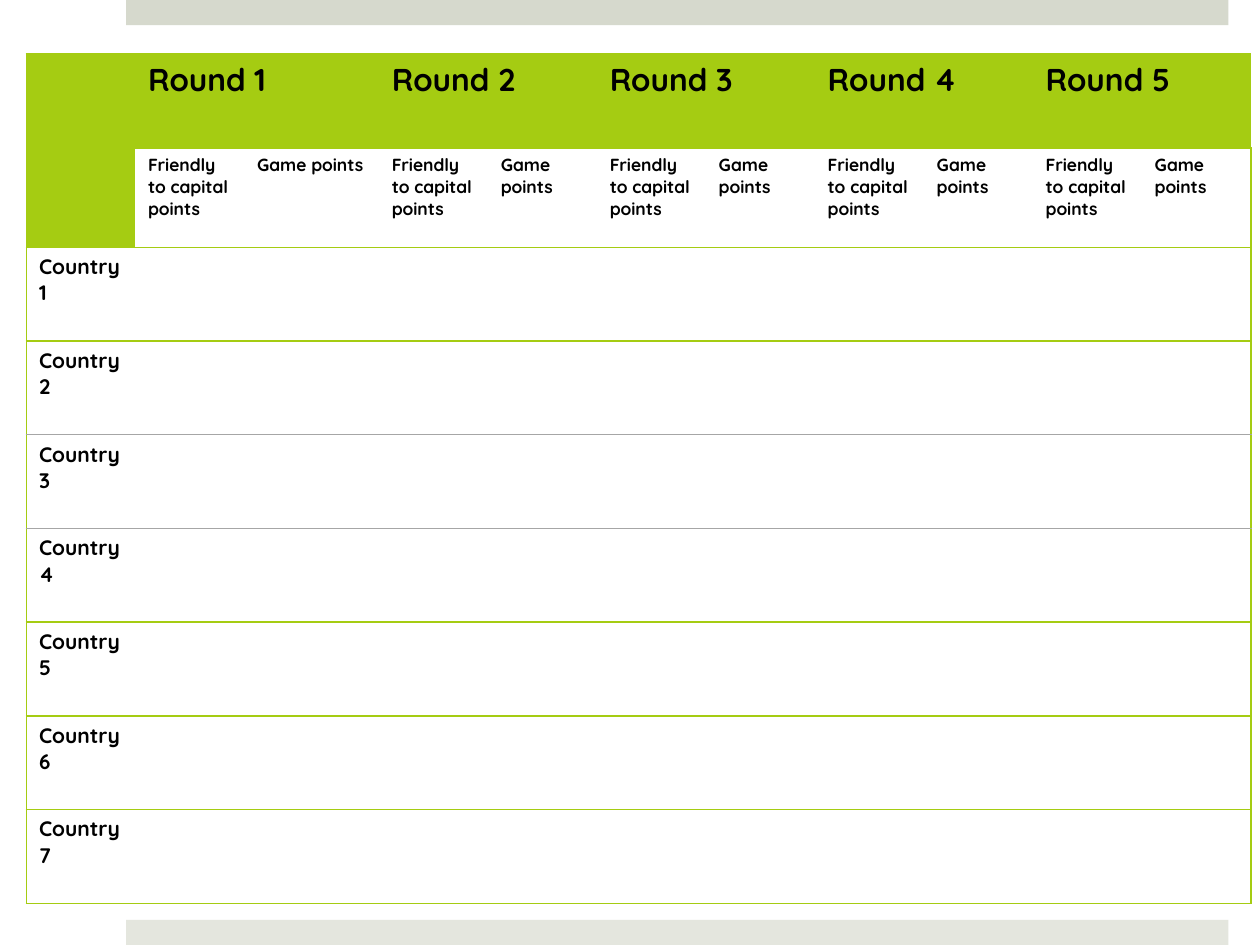
from dataclasses import dataclass

from lxml.etree import SubElement
from pptx import Presentation
from pptx.dml.color import RGBColor
from pptx.enum.shapes import MSO_SHAPE
from pptx.oxml.ns import qn
from pptx.util import Inches, Pt


@dataclass(frozen=True)
class Theme:
    font: str = "Quicksand"
    text: str = "000000"
    green: str = "A5CC12"
    grey: str = "A6A6A6"
    top_bar: str = "D6D9CD"
    bottom_bar: str = "E4E6DE"
    round_size: int = 18
    points_size: int = 10
    country_size: int = 12
    line: float = 1
    thin_line: float = 0.5


THEME = Theme()
ROUNDS = 5
COUNTRIES = 7
HEADER_ROWS = 2
POINT_TYPES = ("Friendly to capital points", "Game points")
GREY_RULES_BELOW = (3, 4)  # table rows with a thin grey rule beneath
NO_STYLE = "{2D5ABB26-0587-4C30-8999-92F81FD0307C}"


def add_bar(slide, top, color):
    sp = slide.shapes.add_shape(
        MSO_SHAPE.RECTANGLE, Inches(1), Inches(top), Inches(8.75), Inches(0.2))
    sp.shadow.inherit = False
    sp.fill.solid()
    sp.fill.fore_color.rgb = RGBColor.from_string(color)
    sp.line.fill.background()


def write_cell(cell, text, size):
    p = cell.text_frame.paragraphs[0]
    r = p.add_run()
    r.text = text
    r.font.name = THEME.font
    r.font.size = Pt(size)
    r.font.bold = True
    r.font.color.rgb = RGBColor.from_string(THEME.text)


def add_border(cell, side, color, width):
    ln = SubElement(cell._tc.get_or_add_tcPr(), qn(f"a:ln{side}"), w=str(Pt(width)))
    fill = SubElement(ln, qn("a:solidFill"))
    SubElement(fill, qn("a:srgbClr"), val=color)


def rule_below(row):
    if row in GREY_RULES_BELOW:
        return THEME.grey, THEME.thin_line
    return THEME.green, THEME.line


def format_cell(cell, row, col, last_col):
    # Outer frame and horizontal rules
    if col == 0:
        add_border(cell, "L", THEME.green, THEME.line)
    if col == last_col:
        add_border(cell, "R", THEME.green, THEME.line)
    add_border(cell, "T", *rule_below(row - 1))
    add_border(cell, "B", *rule_below(row))

    # Green header, clear body
    if row == 0 or (row < HEADER_ROWS and col == 0):
        cell.fill.solid()
        cell.fill.fore_color.rgb = RGBColor.from_string(THEME.green)
    else:
        cell.fill.background()


def add_score_table(slide):
    n_rows = HEADER_ROWS + COUNTRIES
    n_cols = 1 + ROUNDS * len(POINT_TYPES)
    frame = slide.shapes.add_table(
        n_rows, n_cols, Inches(0.21), Inches(0.43), Inches(9.72), Inches(6.74))
    table = frame.table
    table.first_row = False
    table.horz_banding = False
    table._tbl.tblPr.find(qn("a:tableStyleId")).text = NO_STYLE

    # Column widths and row heights
    for col in table.columns:
        col.width = Inches(8.65) // (n_cols - 1)
    table.columns[2].width = Inches(1.07)
    for row in table.rows:
        row.height = Inches(5.95) // (n_rows - 1)
    table.rows[1].height = Inches(0.79)

    for i in range(n_rows):
        for j in range(n_cols):
            format_cell(table.cell(i, j), i, j, n_cols - 1)

    # Round headings, each over its point types
    table.cell(0, 0).merge(table.cell(HEADER_ROWS - 1, 0))
    for i in range(ROUNDS):
        first = 1 + i * len(POINT_TYPES)
        heading = table.cell(0, first)
        heading.merge(table.cell(0, first + len(POINT_TYPES) - 1))
        write_cell(heading, f"Round {i + 1}", THEME.round_size)
        for j, label in enumerate(POINT_TYPES):
            write_cell(table.cell(1, first + j), label, THEME.points_size)

    # Country rows
    for i in range(COUNTRIES):
        write_cell(table.cell(HEADER_ROWS + i, 0), f"Country {i + 1}", THEME.country_size)


def main():
    prs = Presentation()
    prs.slide_width = Inches(10)
    prs.slide_height = Inches(7.5)
    slide = prs.slides.add_slide(prs.slide_layouts[6])
    add_bar(slide, 0, THEME.top_bar)
    add_bar(slide, 7.3, THEME.bottom_bar)
    add_score_table(slide)
    prs.save("out.pptx")


if __name__ == "__main__":
    main()
